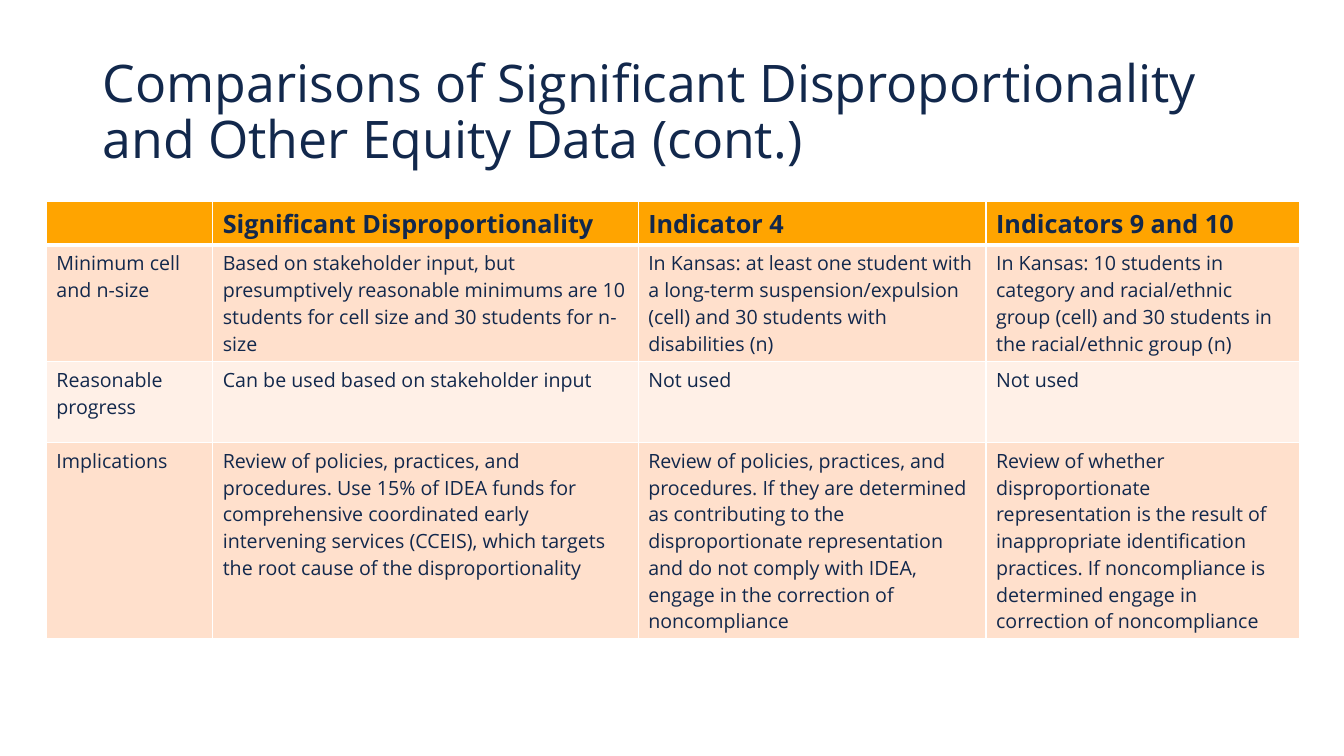
from dataclasses import dataclass

from lxml.etree import SubElement
from pptx import Presentation
from pptx.dml.color import RGBColor
from pptx.enum.text import MSO_ANCHOR
from pptx.oxml.ns import qn
from pptx.util import Inches, Pt


@dataclass(frozen=True)
class Theme:
    font: str = "Open Sans"
    ink: str = "12284C"
    head: str = "FFA400"
    bands: tuple = ("FFE0CC", "FFF0E7")
    rule: str = "FFFFFF"
    title: int = 37
    label: int = 18
    body: int = 14
    thin: int = 1
    thick: int = 3


THEME = Theme()

TITLE = "Comparisons of Significant Disproportionality and Other Equity Data (cont.)"
WIDTHS = (1.65, 4.22, 3.45, 3.11)
HEIGHTS = (0.43, 1.16, 0.8, 1.95)
ROWS = (
    ("", "Significant Disproportionality", "Indicator 4", "Indicators 9 and 10"),
    (
        "Minimum cell and n-size",
        "Based on stakeholder input, but presumptively reasonable minimums are 10 "
        "students for cell size and 30 students for n-size",
        "In Kansas: at least one student with a long-term suspension/expulsion "
        "(cell) and 30 students with disabilities (n)",
        "In Kansas: 10 students in category and racial/ethnic group (cell) and "
        "30 students in the racial/ethnic group (n)",
    ),
    (
        "Reasonable progress",
        "Can be used based on stakeholder input",
        "Not used",
        "Not used",
    ),
    (
        "Implications",
        "Review of policies, practices, and procedures. Use 15% of IDEA funds for "
        "comprehensive coordinated early intervening services (CCEIS), which "
        "targets the root cause of the disproportionality",
        "Review of policies, practices, and procedures. If they are determined as "
        "contributing to the disproportionate representation and do not comply "
        "with IDEA, engage in the correction of noncompliance",
        "Review of whether disproportionate representation is the result of "
        "inappropriate identification practices. If noncompliance is determined "
        "engage in correction of noncompliance",
    ),
)


def write(frame, text, size, bold=False):
    """Put one styled paragraph in a text frame."""
    para = frame.paragraphs[0]
    para.text = text
    for run in para.runs:
        run.font.name = THEME.font
        run.font.size = Pt(size)
        run.font.bold = bold
        run.font.color.rgb = RGBColor.from_string(THEME.ink)
    return para


def add_title(slide):
    box = slide.shapes.add_textbox(Inches(0.92), Inches(0.4), Inches(11.5), Inches(1.45))
    frame = box.text_frame
    frame.word_wrap = True
    frame.vertical_anchor = MSO_ANCHOR.MIDDLE
    write(frame, TITLE, THEME.title).line_spacing = 0.9


def add_rules(cell, row):
    """Draw the cell borders, with a thick rule below the header."""
    sides = {
        "L": THEME.thin,
        "R": THEME.thin,
        "T": THEME.thick if row == 1 else THEME.thin,
        "B": THEME.thick if row == 0 else THEME.thin,
    }
    props = cell._tc.get_or_add_tcPr()
    for side, width in sides.items():
        line = SubElement(props, qn(f"a:ln{side}"), w=str(Pt(width)))
        fill = SubElement(line, qn("a:solidFill"))
        SubElement(fill, qn("a:srgbClr"), val=THEME.rule)


def fill_cell(cell, row, text):
    top = row == 0
    add_rules(cell, row)
    cell.fill.solid()
    color = THEME.head if top else THEME.bands[(row - 1) % 2]
    cell.fill.fore_color.rgb = RGBColor.from_string(color)
    write(cell.text_frame, text, THEME.label if top else THEME.body, top)


def add_grid(slide):
    table = slide.shapes.add_table(
        len(ROWS), len(WIDTHS), Inches(0.46), Inches(2),
        Inches(sum(WIDTHS)), Inches(sum(HEIGHTS)),
    ).table
    for col, width in zip(table.columns, WIDTHS):
        col.width = Inches(width)
    for row, height in zip(table.rows, HEIGHTS):
        row.height = Inches(height)
    for r, texts in enumerate(ROWS):
        for c, text in enumerate(texts):
            fill_cell(table.cell(r, c), r, text)


def main():
    deck = Presentation()
    deck.slide_width = Inches(13.33)
    deck.slide_height = Inches(7.5)
    slide = deck.slides.add_slide(deck.slide_layouts[6])

    # Heading
    add_title(slide)

    # Comparison table
    add_grid(slide)

    deck.save("out.pptx")


if __name__ == "__main__":
    main()
